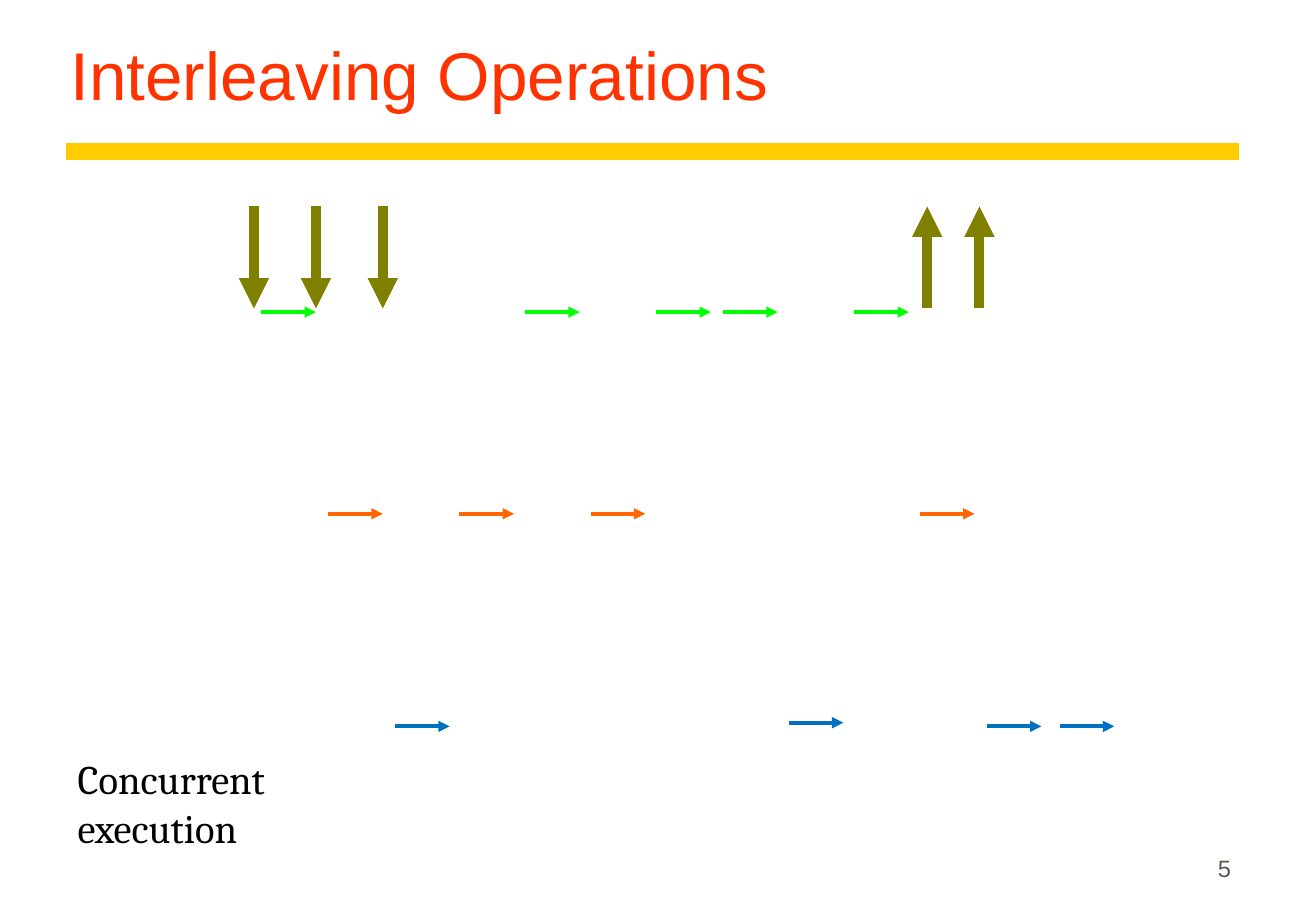
"""Build the slide on interleaving operations of three concurrent threads."""
import pptx
import pptx.dml.color
import pptx.enum.shapes
import pptx.enum.text
import pptx.oxml
import pptx.oxml.ns
import pptx.util
import lxml.etree

Inches = pptx.util.Inches
ANCHOR = pptx.enum.text.MSO_ANCHOR
ALIGN = pptx.enum.text.PP_ALIGN


def style_font(para, name, size, color):
    para.font.name = name
    para.font.size = pptx.util.Pt(size)
    para.font.color.rgb = pptx.dml.color.RGBColor.from_string(color)


def draw_line(start, end, color, width, arrow=True):
    line = page.shapes.add_connector(
        pptx.enum.shapes.MSO_CONNECTOR.STRAIGHT,
        Inches(start[0]), Inches(start[1]), Inches(end[0]), Inches(end[1]))
    line.line.color.rgb = pptx.dml.color.RGBColor.from_string(color)
    line.line.width = pptx.util.Pt(width)
    if arrow:
        outline = line.line._get_or_add_ln()
        lxml.etree.SubElement(outline, pptx.oxml.ns.qn("a:tailEnd"), type="triangle")
    properties = line._element.spPr
    lxml.etree.SubElement(properties, pptx.oxml.ns.qn("a:effectLst"))


deck = pptx.Presentation()
deck.slide_width = Inches(10.83)
deck.slide_height = Inches(7.5)
page = deck.slides.add_slide(deck.slide_layouts[5])

draw_line((0.54, 1.25), (10.2, 1.25), "FFCC00", 10, arrow=False)

title = page.shapes.title
title.left, title.top = Inches(0.48), Inches(0.25)
title.width, title.height = Inches(9.72), Inches(0.8)
title.text_frame.text = "Interleaving Operations"
title.text_frame.vertical_anchor = ANCHOR.MIDDLE
heading = title.text_frame.paragraphs[0]
heading.alignment = ALIGN.LEFT
heading.line_spacing = 0.9
style_font(heading, "Arial", 40, "FF3300")

STEP_LENGTH = 0.45
threads = [
    ("00FF00", [(2.15, 2.57), (4.32, 2.57), (5.4, 2.57), (5.95, 2.57), (7.03, 2.57)]),
    ("FF6600", [(2.7, 4.23), (3.78, 4.23), (4.86, 4.23), (7.57, 4.23)]),
    ("0070C0", [(3.25, 5.98), (6.49, 5.95), (8.12, 5.98), (8.72, 5.98)]),
]
for color, steps in threads:
    for left, top in steps:
        draw_line((left, top), (left + STEP_LENGTH, top), color, 2.25)

UPPER, LOWER = 1.7, 2.54
for x in (2.09, 2.6, 3.15):
    draw_line((x, UPPER), (x, LOWER), "808000", 6)
for x in (7.63, 8.06):
    draw_line((x, LOWER), (x, UPPER), "808000", 6)

caption = page.shapes.add_textbox(Inches(0.54), Inches(6.16), Inches(3.11), Inches(0.5))
caption.text_frame.word_wrap = True
caption.text_frame.margin_right = Inches(1)
caption.text_frame.text = "Concurrent execution"
style_font(caption.text_frame.paragraphs[0], "Cambria", 24, "000000")

number = page.shapes.add_textbox(Inches(9.03), Inches(7), Inches(1.2), Inches(0.31))
number.text_frame.word_wrap = True
number.text_frame.vertical_anchor = ANCHOR.BOTTOM
number.text_frame.text = "5"
number.text_frame.paragraphs[0].alignment = ALIGN.RIGHT
style_font(number.text_frame.paragraphs[0], "Arial", 14, "5E574E")

deck.save("out.pptx")
